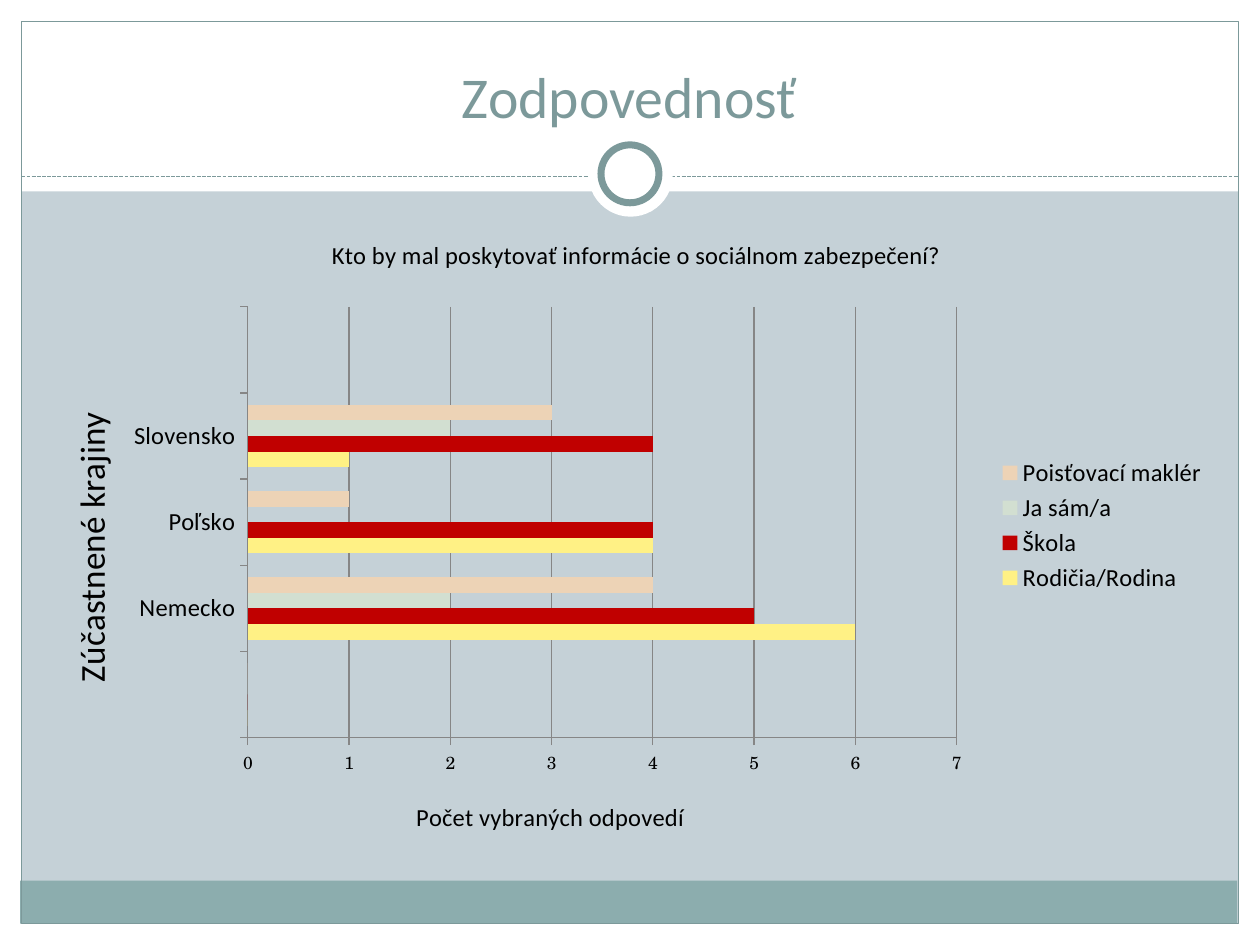
from lxml.etree import SubElement
from pptx import Presentation
from pptx.chart.data import CategoryChartData
from pptx.dml.color import RGBColor
from pptx.enum.chart import XL_CHART_TYPE, XL_LEGEND_POSITION, XL_TICK_MARK
from pptx.enum.dml import MSO_LINE
from pptx.enum.shapes import MSO_CONNECTOR, MSO_SHAPE
from pptx.enum.text import MSO_ANCHOR, PP_ALIGN
from pptx.oxml import parse_xml
from pptx.oxml.ns import nsdecls, qn
from pptx.util import Inches, Pt

WHITE = RGBColor(0xFF, 0xFF, 0xFF)
BLACK = RGBColor(0, 0, 0)
BACKGROUND = RGBColor(0xC5, 0xD1, 0xD7)
FOOTER = RGBColor(0x8C, 0xAD, 0xAE)
ACCENT = RGBColor(0x7C, 0x99, 0x9A)
GRID = RGBColor(0x86, 0x86, 0x86)

CATEGORIES = [" ", "Nemecko", "Poľsko", "Slovensko", " "]
SERIES = [
    ("Rodičia/Rodina", (0, 6, 4, 1, None), RGBColor(0xFF, 0xF1, 0x85)),
    ("Škola", (0, 5, 4, 4, None), RGBColor(0xC0, 0, 0)),
    ("Ja sám/a", (0, 2, 0, 2, None), RGBColor(0xD2, 0xDF, 0xD1)),
    ("Poisťovací maklér", (0, 4, 1, 3, None), RGBColor(0xED, 0xD3, 0xB6)),
]


def style_font(font, size, color=BLACK, name="Calibri"):
    font.name = name
    font.size = Pt(size)
    font.bold = False
    font.color.rgb = color


def place(element, x, y, width=None, height=None, inner=False):
    """Set the manual layout of a chart part, as fractions of the chart."""
    for old in element.findall(qn("c:layout")):
        element.remove(old)
    values = [("xMode", "edge"), ("yMode", "edge"), ("x", x), ("y", y)]
    if inner:
        values.insert(0, ("layoutTarget", "inner"))
    if width:
        values += [("w", width), ("h", height)]
    layout = parse_xml(f"<c:layout {nsdecls('c')}><c:manualLayout/></c:layout>")
    for tag, value in values:
        SubElement(layout[0], qn(f"c:{tag}")).set("val", str(value))
    overlay = element.find(qn("c:overlay"))
    if overlay is None:
        element.insert(0, layout)
    else:
        overlay.addprevious(layout)


class SlideBuilder:
    def __init__(self, deck):
        self.page = deck.slides.add_slide(deck.slide_layouts[5])
        fill = self.page.background.fill
        fill.solid()
        fill.fore_color.rgb = BACKGROUND

    def shape(self, kind, left, top, width, height, fill=None, line=None, weight=0.75):
        shape = self.page.shapes.add_shape(
            kind, Inches(left), Inches(top), Inches(width), Inches(height))
        shape.shadow.inherit = False
        if fill is None:
            shape.fill.background()
        else:
            shape.fill.solid()
            shape.fill.fore_color.rgb = fill
        if line is None:
            shape.line.fill.background()
        else:
            shape.line.color.rgb = line
            shape.line.width = Pt(weight)

    def dashed_line(self, left, right, y):
        line = self.page.shapes.add_connector(
            MSO_CONNECTOR.STRAIGHT, Inches(left), Inches(y), Inches(right), Inches(y))
        line.line.color.rgb = ACCENT
        line.line.width = Pt(0.75)
        line.line.dash_style = MSO_LINE.SQUARE_DOT
        SubElement(line._element.spPr, qn("a:effectLst"))

    def title(self, text, left, top, width, height):
        title = self.page.shapes.title
        title.left, title.top = Inches(left), Inches(top)
        title.width, title.height = Inches(width), Inches(height)
        frame = title.text_frame
        frame.text = text
        frame.vertical_anchor = MSO_ANCHOR.BOTTOM
        para = frame.paragraphs[0]
        para.alignment = PP_ALIGN.CENTER
        style_font(para.runs[0].font, 33, ACCENT)
        # Bring the title in front of the white band
        self.page.shapes._spTree.append(title._element)

    def chart_title(self, owner, title, text, size, x, y):
        owner.has_title = True
        title.text_frame.text = text
        style_font(title.text_frame.paragraphs[0].runs[0].font, size)
        place(title._element, x, y)

    def bar_chart(self, left, top, width, height):
        data = CategoryChartData()
        data.categories = CATEGORIES
        for name, values, _ in SERIES:
            data.add_series(name, values)
        chart = self.page.shapes.add_chart(
            XL_CHART_TYPE.BAR_CLUSTERED, Inches(left), Inches(top),
            Inches(width), Inches(height), data).chart
        style_font(chart.font, 10, name="TeX Gyre Schola")

        # Bars
        plot = chart.plots[0]
        plot.gap_width = 150
        plot.vary_by_categories = False
        for series, (_, _, color) in zip(plot.series, SERIES):
            series.format.fill.solid()
            series.format.fill.fore_color.rgb = color
        place(chart._chartSpace.chart.plotArea, 0.176, 0.153, 0.605, 0.684, inner=True)

        # Axes
        category, value = chart.category_axis, chart.value_axis
        for axis in (category, value):
            axis.major_tick_mark = XL_TICK_MARK.OUTSIDE
            axis.format.line.color.rgb = GRID
        style_font(category.tick_labels.font, 14)
        value.minimum_scale, value.maximum_scale, value.major_unit = 0, 7, 1
        value.has_major_gridlines = True
        value.major_gridlines.format.line.color.rgb = GRID

        # Titles
        self.chart_title(chart, chart.chart_title,
                         "Kto by mal poskytovať informácie o sociálnom zabezpečení?",
                         14, 0.244, 0.037)
        self.chart_title(category, category.axis_title,
                         "Zúčastnené krajiny", 20, 0.016, 0.31)
        self.chart_title(value, value.axis_title,
                         "Počet vybraných odpovedí", 14, 0.316, 0.928)

        # Legend
        chart.has_legend = True
        chart.legend.position = XL_LEGEND_POSITION.RIGHT
        chart.legend.include_in_layout = False
        style_font(chart.legend.font, 14)
        place(chart.legend._element, 0.81, 0.385, 0.19, 0.23)


def main():
    deck = Presentation()
    deck.slide_width, deck.slide_height = Inches(10), Inches(7.5)
    slide = SlideBuilder(deck)

    # White margins and header band
    for box in ((0, 7.33, 10, 0.17), (0, 0, 10, 1.52),
                (0, 0, 0.17, 7.5), (9.83, 0, 0.17, 7.5)):
        slide.shape(MSO_SHAPE.RECTANGLE, *box, fill=WHITE)

    # Footer band, frame and divider with ring
    slide.shape(MSO_SHAPE.RECTANGLE, 0.16, 6.99, 9.66, 0.34, fill=FOOTER)
    slide.shape(MSO_SHAPE.RECTANGLE, 0.17, 0.17, 9.66, 7.16, line=ACCENT)
    slide.dashed_line(0.17, 9.83, 1.4)
    slide.shape(MSO_SHAPE.OVAL, 4.67, 1.05, 0.67, 0.67, fill=WHITE)
    slide.shape(MSO_SHAPE.OVAL, 4.77, 1.15, 0.46, 0.46, WHITE, ACCENT, 4)

    # Content
    slide.title("Zodpovednosť", 0.33, 0.25, 9.33, 0.83)
    slide.bar_chart(0.33, 1.67, 9.3, 5)
    deck.save("out.pptx")


if __name__ == "__main__":
    main()
